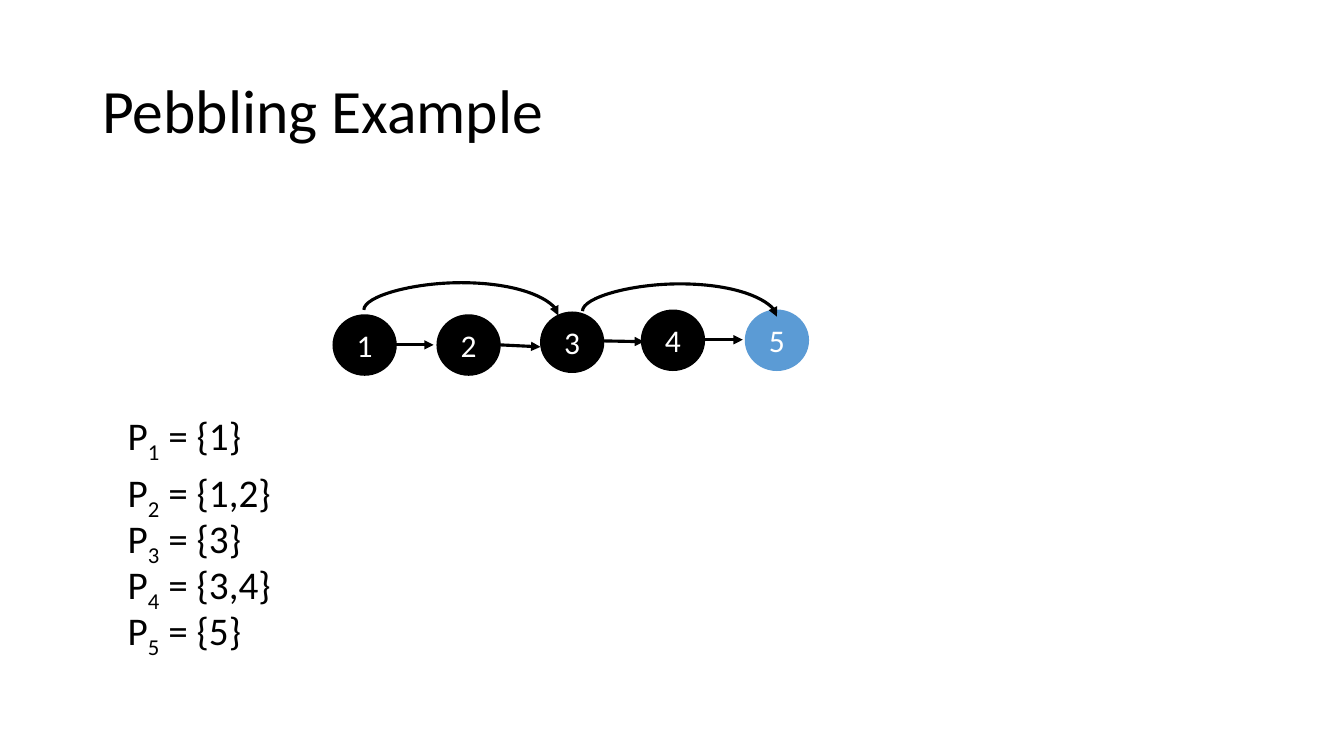
from lxml import etree
from pptx import Presentation
from pptx import util as u
from pptx.dml.color import RGBColor
from pptx.enum import shapes, text
from pptx.oxml.ns import qn

# Content
TITLE = "Pebbling Example"
NODES = [  # label, left, top (cm), fill
    ("1", 8.38, 7.92, "ink"),
    ("2", 11.0, 7.92, "ink"),
    ("3", 13.61, 7.85, "ink"),
    ("4", 16.15, 7.8, "ink"),
    ("5", 18.77, 7.8, "accent"),
]
STEP_ARROWS = [  # left, start height, end height (cm)
    (9.91, 8.69, 8.69),
    (12.6, 8.69, 8.74),
    (15.21, 8.59, 8.61),
    (17.7, 8.56, 8.56),
]
SKIP_ARROWS = [(9.17, 7.81), (14.68, 7.84)]  # start point (cm)
PEBBLES = ["1", "1,2", "3", "3,4", "5"]

THEME = {
    "font": "Calibri", "ink": "000000", "paper": "FFFFFF", "accent": "5B9BD5",
    "title": 44, "set": 28, "node": 22.5, "line": 2.25,
}
NODE_WIDTH, NODE_HEIGHT = 1.62, 1.55
STEP_LENGTH = 1.02
SKIP_SPAN, SKIP_DROP, SKIP_BEND = 4.9, 0.14, -490100
SET_LEFT, FIRST_SET_TOP, SECOND_SET_TOP, SET_PITCH = 2.97, 10.24, 11.68, 1.16


def colour(name):
    return RGBColor.from_string(THEME[name])


def add_run(paragraph, words, size, ink="ink", baseline=None):
    run = paragraph.add_run()
    run.text = words
    for name, value in {"name": THEME["font"], "size": u.Pt(THEME[size])}.items():
        setattr(run.font, name, value)
    run.font.color.rgb = colour(ink)
    if baseline:
        run.font._element.set("baseline", str(baseline))


def add_text_box(slide, box, frame_format):
    frame = slide.shapes.add_textbox(*map(u.Cm, box)).text_frame
    for name, value in frame_format.items():
        setattr(frame, name, value)
    return frame.paragraphs[0]


def add_node(slide, label, left, top, fill):
    shape = slide.shapes.add_shape(
        shapes.MSO_SHAPE.OVAL, *map(u.Cm, (left, top, NODE_WIDTH, NODE_HEIGHT)))
    shape.shadow.inherit = False
    shape.fill.solid()
    shape.fill.fore_color.rgb = colour(fill)
    shape.line.fill.background()
    shape.text_frame.vertical_anchor = text.MSO_ANCHOR.MIDDLE
    paragraph = shape.text_frame.paragraphs[0]
    paragraph.alignment = text.PP_ALIGN.CENTER
    add_run(paragraph, label, "node", "paper")


def add_arrow(slide, kind, *ends):
    arrow = slide.shapes.add_connector(kind, *map(u.Cm, ends))
    arrow.line.width = u.Pt(THEME["line"])
    arrow.line.color.rgb = colour("ink")
    etree.SubElement(arrow.line._get_or_add_ln(), qn("a:tailEnd"), type="triangle")
    properties = arrow._element.spPr
    etree.SubElement(properties, qn("a:effectLst"))
    return properties


def add_skip_arrow(slide, left, top):
    # A tall, thin curve turned by 270 degrees about its centre
    middle, centre = left + SKIP_SPAN / 2, top + SKIP_DROP / 2
    properties = add_arrow(
        slide, shapes.MSO_CONNECTOR.CURVE,
        middle + SKIP_DROP / 2, centre - SKIP_SPAN / 2,
        middle - SKIP_DROP / 2, centre + SKIP_SPAN / 2)
    properties.find(qn("a:xfrm")).set("rot", str(270 * 60000))
    guides = properties.find(qn("a:prstGeom")).find(qn("a:avLst"))
    etree.SubElement(guides, qn("a:gd"), name="adj1", fmla=f"val {SKIP_BEND}")


def main():
    presentation = Presentation()
    presentation.slide_width, presentation.slide_height = u.Cm(33.87), u.Cm(19.05)
    slide = presentation.slides.add_slide(presentation.slide_layouts[6])

    # Title
    title = add_text_box(slide, (2.33, 1.01, 29.21, 3.68), {
        "word_wrap": True, "vertical_anchor": text.MSO_ANCHOR.MIDDLE})
    title.line_spacing = 0.9
    add_run(title, TITLE, "title")

    # Graph
    for node in NODES:
        add_node(slide, *node)
    for left, start, end in STEP_ARROWS:
        add_arrow(slide, shapes.MSO_CONNECTOR.STRAIGHT,
                  left, start, left + STEP_LENGTH, end)
    for start in SKIP_ARROWS:
        add_skip_arrow(slide, *start)

    # Pebble sets
    for index, members in enumerate(PEBBLES):
        top = SECOND_SET_TOP + (index - 1) * SET_PITCH if index else FIRST_SET_TOP
        width = 4.22 if "," in members else 3.45
        paragraph = add_text_box(slide, (SET_LEFT, top, width, 1.45), {
            "word_wrap": False, "auto_size": text.MSO_AUTO_SIZE.SHAPE_TO_FIT_TEXT})
        add_run(paragraph, "P", "set")
        add_run(paragraph, str(index + 1), "set", baseline=-25000)
        add_run(paragraph, f" = {{{members}}}", "set")

    presentation.save("out.pptx")


if __name__ == "__main__":
    main()
